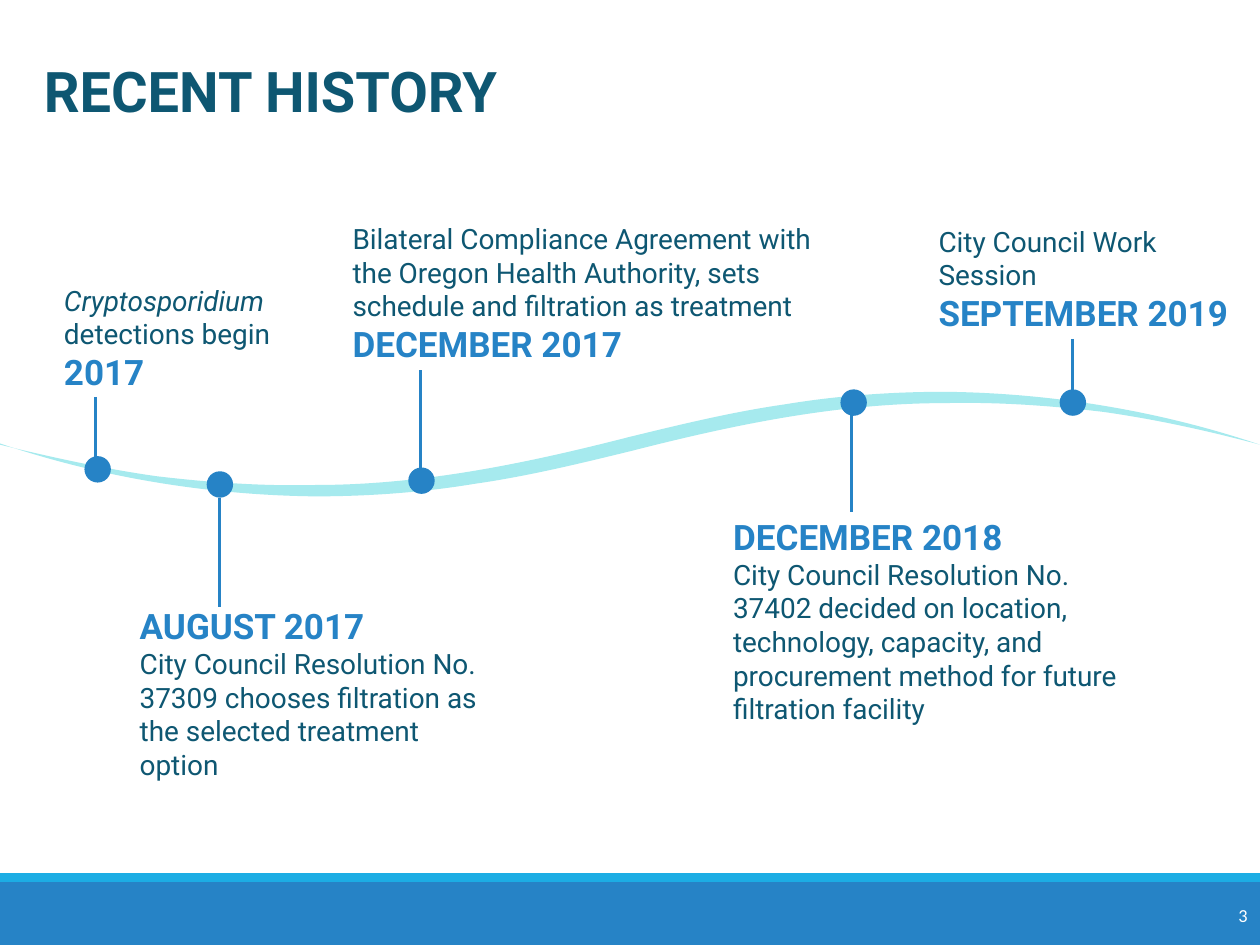
"""Build the recent history timeline slide."""
import dataclasses

import lxml.etree
import pptx
import pptx.dml.color
import pptx.enum.shapes
import pptx.enum.text
import pptx.oxml.ns
import pptx.util

Inches = pptx.util.Inches
qn = pptx.oxml.ns.qn


@dataclasses.dataclass(frozen=True)
class Theme:
    font: str = "Roboto"
    number_font: str = "Calibri"
    ink: str = "0E5772"
    accent: str = "2683C6"
    stripe: str = "1CADE4"
    wave: str = "A6EAEE"
    white: str = "FFFFFF"
    title_size: float = 32
    date_size: float = 20
    body_size: float = 16
    number_size: float = 10.5
    stem_width: float = 1.5
    dot: float = 0.21


def color(value):
    return pptx.dml.color.RGBColor.from_string(value)


class TimelineSlide:
    def __init__(self, slide, theme):
        self.shapes = slide.shapes
        self.theme = theme

    def paint(self, shape, fill):
        shape.shadow.inherit = False
        shape.fill.solid()
        shape.fill.fore_color.rgb = color(fill)
        shape.line.fill.background()

    def shape(self, kind, box, fill):
        self.paint(self.shapes.add_shape(kind, *map(Inches, box)), fill)

    def bar(self, top, height, fill):
        self.shape(pptx.enum.shapes.MSO_SHAPE.RECTANGLE, (0, top, 10, height), fill)

    def dot(self, left, top):
        size = self.theme.dot
        self.shape(pptx.enum.shapes.MSO_SHAPE.OVAL, (left, top, size, size), self.theme.accent)

    def wave(self, start, upper, width, height_sum):
        lower = [[(width - x, height_sum - y) for x, y in curve] for curve in upper]
        curves = upper + lower
        builder = self.shapes.build_freeform(*map(Inches, start))
        builder.add_line_segments([tuple(map(Inches, curve[-1])) for curve in curves])
        shape = builder.convert_to_shape()
        self.paint(shape, self.theme.wave)
        for line, curve in zip(list(shape._element.iter(qn("a:lnTo"))), curves):
            cubic = lxml.etree.Element(qn("a:cubicBezTo"))
            for x, y in curve:
                point = lxml.etree.SubElement(cubic, qn("a:pt"))
                point.set("x", str(Inches(x) - shape.left))
                point.set("y", str(Inches(y) - shape.top))
            line.getparent().replace(line, cubic)

    def stem(self, x, top, bottom):
        connector = self.shapes.add_connector(
            pptx.enum.shapes.MSO_CONNECTOR.STRAIGHT,
            Inches(x), Inches(top), Inches(x), Inches(bottom),
        )
        connector.line.color.rgb = color(self.theme.accent)
        connector.line.width = pptx.util.Pt(self.theme.stem_width)
        lxml.etree.SubElement(connector._element.spPr, qn("a:effectLst"))

    def text_frame(self, box, grow=True):
        frame = self.shapes.add_textbox(*map(Inches, box)).text_frame
        frame.word_wrap = True
        if grow:
            frame.auto_size = pptx.enum.text.MSO_AUTO_SIZE.SHAPE_TO_FIT_TEXT
        return frame

    def run(self, paragraph, text, size, fill, bold=False, italic=False, font=None):
        run = paragraph.add_run()
        run.text = text
        run.font.name = font or self.theme.font
        run.font.size = pptx.util.Pt(size)
        run.font.bold = bold
        run.font.italic = italic
        run.font.color.rgb = color(fill)

    def body(self, paragraph, text, italic=False):
        self.run(paragraph, text, self.theme.body_size, self.theme.ink, italic=italic)

    def date(self, paragraph, text):
        self.run(paragraph, text, self.theme.date_size, self.theme.accent, bold=True)

    def title(self, box, text):
        paragraph = self.text_frame(box).paragraphs[0]
        self.run(paragraph, text, self.theme.title_size, self.theme.ink, bold=True)

    def first_milestone(self, box, species, event, date):
        paragraph = self.text_frame(box).paragraphs[0]
        self.body(paragraph, species, italic=True)
        self.body(paragraph, event)
        paragraph.add_line_break()
        self.date(paragraph, date)

    def milestone(self, box, date, event, date_first):
        frame = self.text_frame(box)
        lines = [(self.body, event), (self.date, date)]
        if date_first:
            lines.reverse()
        for paragraph, (write, text) in zip((frame.paragraphs[0], frame.add_paragraph()), lines):
            write(paragraph, text)

    def page_number(self, box, number):
        frame = self.text_frame(box, grow=False)
        frame.vertical_anchor = pptx.enum.text.MSO_ANCHOR.MIDDLE
        paragraph = frame.paragraphs[0]
        paragraph.alignment = pptx.enum.text.PP_ALIGN.RIGHT
        theme = self.theme
        self.run(paragraph, number, theme.number_size, theme.white, font=theme.number_font)


WAVE_START = (0, 3.53)
WAVE_CURVES = [
    [(0.41, 3.63), (0.82, 3.72), (1.24, 3.78)],
    [(1.66, 3.83), (2.08, 3.86), (2.5, 3.85)],
    [(3.35, 3.85), (4.17, 3.68), (4.99, 3.47)],
    [(5.4, 3.37), (5.81, 3.27), (6.23, 3.21)],
    [(6.65, 3.14), (7.08, 3.11), (7.5, 3.11)],
    [(8.35, 3.12), (9.2, 3.26), (10, 3.53)],
]
FIRST_MILESTONE = ((0.41, 2.2, 2.47, 0.98), "Cryptosporidium", " detections begin", "2017")
MILESTONES = [
    ((1.64, 3.74), (1.74, 3.95, 4.82), (1.01, 4.75, 3.01, 1.51), "AUGUST 2017",
     "City Council Resolution No. 37309 chooses filtration as the selected treatment option", True),
    ((3.24, 3.71), (3.34, 2.94, 3.81), (2.7, 1.71, 4.13, 1.25), "DECEMBER 2017",
     "Bilateral Compliance Agreement with the Oregon Health Authority, sets schedule and "
     "filtration as treatment", False),
    ((6.67, 3.09), (6.76, 3.19, 4.06), (5.72, 4.04, 3.46, 1.78), "DECEMBER 2018",
     "City Council Resolution No. 37402 decided on location, technology, capacity, and "
     "procurement method for future filtration facility", True),
    ((8.41, 3.09), (8.51, 2.69, 3.26), (7.35, 1.73, 2.52, 1.25), "SEPTEMBER 2019",
     "City Council Work Session", False),
]


def main():
    presentation = pptx.Presentation()
    presentation.slide_width = Inches(10)
    presentation.slide_height = Inches(7.5)
    theme = Theme()
    timeline = TimelineSlide(presentation.slides.add_slide(presentation.slide_layouts[6]), theme)
    timeline.bar(7, 0.5, theme.accent)
    timeline.bar(6.93, 0.07, theme.stripe)
    timeline.wave(WAVE_START, WAVE_CURVES, width=10, height_sum=7.05)
    timeline.dot(0.67, 3.62)
    timeline.first_milestone(*FIRST_MILESTONE)
    timeline.stem(0.76, 3.15, 3.72)
    for dot, stem, *text in MILESTONES:
        timeline.dot(*dot)
        timeline.milestone(*text)
        timeline.stem(*stem)
    timeline.title((0.25, 0.4, 4.26, 0.64), "RECENT HISTORY")
    timeline.page_number((8.92, 7.06, 1.08, 0.4), "3")
    presentation.save("out.pptx")


if __name__ == "__main__":
    main()
